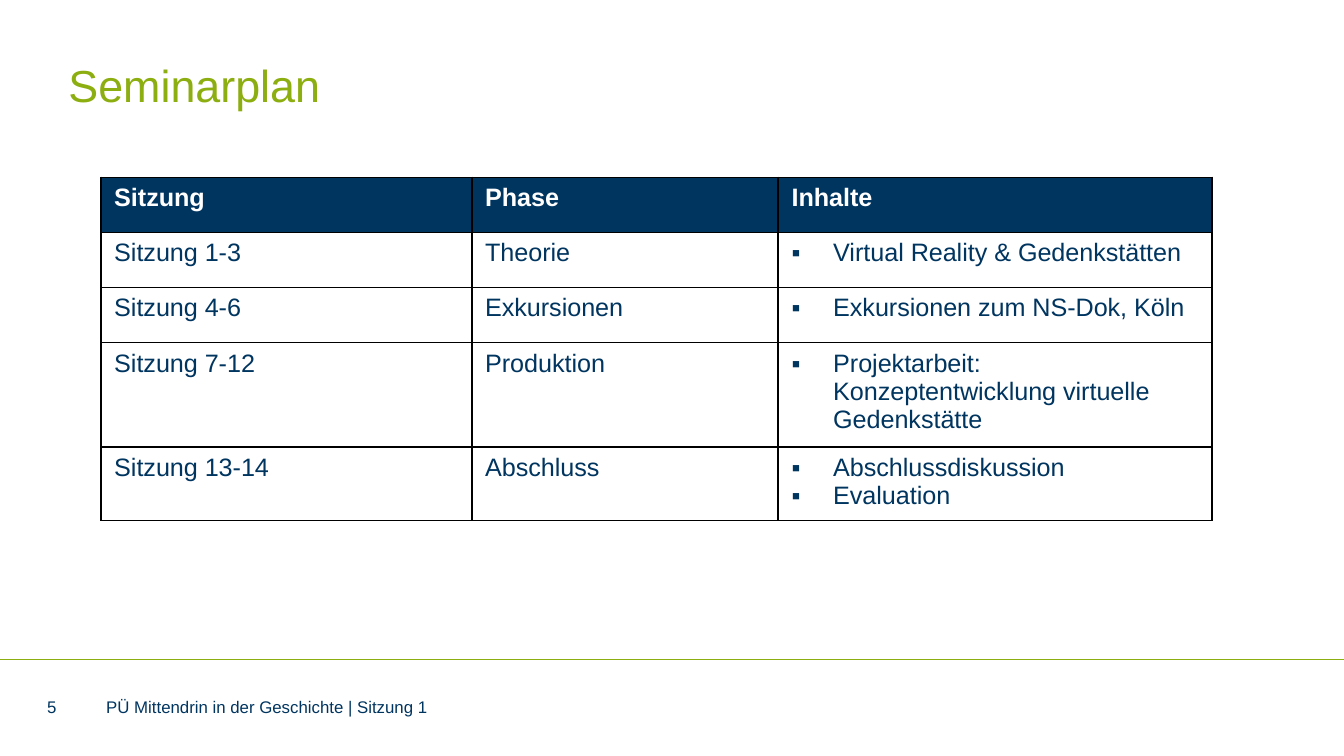
from lxml import etree
from pptx import Presentation
from pptx.dml.color import RGBColor
from pptx.enum import shapes, text
from pptx.oxml import ns
from pptx.util import Inches, Pt

COLORS = {"green": "8DAE10", "navy": "003560", "white": "FFFFFF", "black": "000000"}
FONT = "Arial"
COL_WIDTHS = [2.76, 2.28, 3.23]
ROW_HEIGHT = 0.41
HEADER = ["Sitzung", "Phase", "Inhalte"]
SESSIONS = [
    ("Sitzung 1-3", "Theorie", ["Virtual Reality & Gedenkstätten"]),
    ("Sitzung 4-6", "Exkursionen", ["Exkursionen zum NS-Dok, Köln"]),
    ("Sitzung 7-12", "Produktion",
     ["Projektarbeit: Konzeptentwicklung virtuelle Gedenkstätte"]),
    ("Sitzung 13-14", "Abschluss", ["Abschlussdiskussion", "Evaluation"]),
]


def rgb(name):
    return RGBColor.from_string(COLORS[name])


def add_run(p, words, size, color, bold=False):
    r = p.add_run()
    r.text = words
    r.font.name = FONT
    r.font.size = Pt(size)
    r.font.bold = bold
    r.font.color.rgb = rgb(color)
    # The paragraph end takes the run's size, so it does not stretch the line
    etree.SubElement(p._p, ns.qn("a:endParaRPr")).set("sz", str(int(size * 100)))


def add_text(s, box, words, size, color, anchor):
    tf = s.shapes.add_textbox(*map(Inches, box)).text_frame
    tf.word_wrap = True
    tf.margin_left = tf.margin_right = tf.margin_top = tf.margin_bottom = 0
    tf.vertical_anchor = anchor
    add_run(tf.paragraphs[0], words, size, color)


def add_rule(s, y, width, color):
    line = s.shapes.add_connector(shapes.MSO_CONNECTOR.STRAIGHT,
                                  0, Inches(y), Inches(width), Inches(y))
    line.line.color.rgb = rgb(color)
    line.line.width = Pt(0.5)
    etree.SubElement(line._element.spPr, ns.qn("a:effectLst"))


def set_bullet(p):
    pPr = p._p.get_or_add_pPr()
    pPr.set("marL", str(Inches(0.31)))
    pPr.set("indent", str(-Inches(0.31)))
    etree.SubElement(pPr, ns.qn("a:buFont")).set("typeface", FONT)
    etree.SubElement(pPr, ns.qn("a:buChar")).set("char", "▪")


def set_borders(cell):
    tcPr = cell._tc.get_or_add_tcPr()
    for i, side in enumerate(("lnL", "lnR", "lnT", "lnB")):
        ln = etree.Element(ns.qn("a:" + side), w=str(Pt(1)))
        fill = etree.SubElement(ln, ns.qn("a:solidFill"))
        etree.SubElement(fill, ns.qn("a:srgbClr")).set("val", COLORS["black"])
        tcPr.insert(i, ln)  # borders come before the fill


def fill_cell(cell, lines, fill, color, bold=False, bullets=False):
    cell.fill.solid()
    cell.fill.fore_color.rgb = rgb(fill)
    set_borders(cell)
    tf = cell.text_frame
    for i, words in enumerate(lines):
        p = tf.add_paragraph() if i else tf.paragraphs[0]
        if bullets:
            set_bullet(p)
        add_run(p, words, 13.5, color, bold)


def add_plan(s, left, top):
    n_rows = len(SESSIONS) + 1
    table = s.shapes.add_table(n_rows, len(HEADER), Inches(left), Inches(top),
                               Inches(sum(COL_WIDTHS)),
                               Inches(n_rows * ROW_HEIGHT)).table
    for col, width in zip(table.columns, COL_WIDTHS):
        col.width = Inches(width)
    for row in table.rows:
        row.height = Inches(ROW_HEIGHT)

    for c, words in enumerate(HEADER):
        fill_cell(table.cell(0, c), [words], "navy", "white", bold=True)
    for r, (session, phase, topics) in enumerate(SESSIONS, 1):
        fill_cell(table.cell(r, 0), [session], "white", "navy")
        fill_cell(table.cell(r, 1), [phase], "white", "navy")
        fill_cell(table.cell(r, 2), topics, "white", "navy", bullets=True)


def main():
    prs = Presentation()
    prs.slide_width = Inches(10)
    prs.slide_height = prs.slide_width * 9 // 16
    s = prs.slides.add_slide(prs.slide_layouts[6])
    top, middle = text.MSO_ANCHOR.TOP, text.MSO_ANCHOR.MIDDLE

    # Footer rule
    add_rule(s, 4.91, 10, "green")

    # Title and seminar plan
    add_text(s, (0.51, 0.43, 8.27, 0.51), "Seminarplan", 24, "green", top)
    add_plan(s, 0.75, 1.32)

    # Slide number and footer
    add_text(s, (0.35, 5.2, 0.28, 0.12), "5", 9, "navy", middle)
    add_text(s, (0.79, 5.2, 6.02, 0.12),
             "PÜ Mittendrin in der Geschichte | Sitzung 1", 9, "navy", middle)

    prs.save("out.pptx")


if __name__ == "__main__":
    main()
